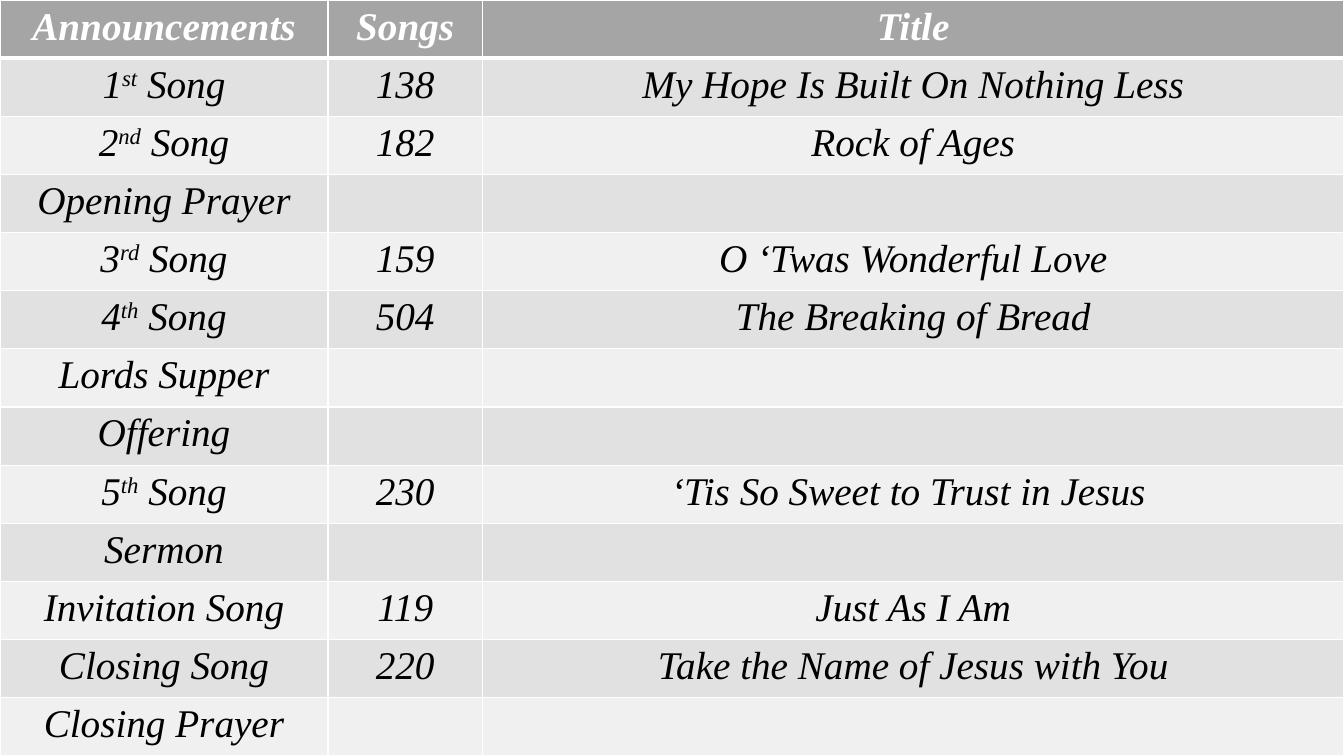
from lxml import etree
from pptx import Presentation
from pptx.dml.color import RGBColor
from pptx.enum.text import PP_ALIGN
from pptx.oxml.ns import qn
from pptx.util import Inches, Pt

HEAD = ("Announcements", "Songs", "Title")
# A tuple holds the number, its raised ending and the rest of the label.
ORDER = [
    (("1", "st", " Song"), "138", "My Hope Is Built On Nothing Less"),
    (("2", "nd", " Song"), "182", "Rock of Ages"),
    ("Opening Prayer", "", ""),
    (("3", "rd", " Song"), "159", "O ‘Twas Wonderful Love"),
    (("4", "th", " Song"), "504", "The Breaking of Bread"),
    ("Lords Supper", "", ""),
    ("Offering", "", ""),
    (("5", "th", " Song"), "230", "‘Tis So Sweet to Trust in Jesus "),
    ("Sermon", "", ""),
    ("Invitation Song", "119", "Just As I Am"),
    ("Closing Song", "220", "Take the Name of Jesus with You"),
    ("Closing Prayer", "", ""),
]
ROWS = [HEAD, *ORDER]

WIDE, HIGH = Inches(13.33), Inches(7.5)
SHARES = (0.244, 0.115, 0.641)
FONT = "Times New Roman"
WHITE = RGBColor(0xFF, 0xFF, 0xFF)
BLACK = RGBColor(0, 0, 0)
GREY = RGBColor(0xA5, 0xA5, 0xA5)
BANDS = (RGBColor(0xF0, 0xF0, 0xF0), RGBColor(0xE1, 0xE1, 0xE1))
CENTER = PP_ALIGN.CENTER


def write(cell, text, size=28, color=BLACK, bold=False):
    """Fill a cell with centred italics; the middle part of a tuple is raised."""
    parts = (text,) if isinstance(text, str) else text
    para = cell.text_frame.paragraphs[0]
    para.alignment = CENTER
    para.font.size = Pt(size)
    for spot, part in enumerate(parts):
        if not part:
            continue
        run = para.add_run()
        run.text = part
        font = run.font
        font.name, font.size = FONT, Pt(size)
        font.bold, font.italic = bold, True
        font.color.rgb = color
        if spot == 1:
            run._r.get_or_add_rPr().set("baseline", "30000")


def edge(cell, top=1, base=1):
    """Draw white borders, with widths in points for the top and base."""
    props = cell._tc.get_or_add_tcPr()
    sides = (("a:lnL", 1), ("a:lnR", 1), ("a:lnT", top), ("a:lnB", base))
    for spot, (tag, width) in enumerate(sides):
        line = etree.Element(qn(tag), w=str(Pt(width)))
        fill = etree.SubElement(line, qn("a:solidFill"))
        etree.SubElement(fill, qn("a:srgbClr"), val=str(WHITE))
        props.insert(spot, line)


def main():
    deck = Presentation()
    deck.slide_width, deck.slide_height = WIDE, HIGH
    slide = deck.slides.add_slide(deck.slide_layouts[6])
    frame = slide.shapes.add_table(len(ROWS), len(HEAD), 0, 0, WIDE, HIGH)
    table = frame.table
    for col, share in zip(table.columns, SHARES):
        col.width = int(WIDE * share)
    for r, texts in enumerate(ROWS):
        table.rows[r].height = HIGH // len(ROWS)
        head = r == 0
        for c, text in enumerate(texts):
            cell = table.cell(r, c)
            cell.fill.solid()
            cell.fill.fore_color.rgb = GREY if head else BANDS[r % 2]
            write(cell, text, color=WHITE if head else BLACK, bold=head)
            edge(cell, top=3 if r == 1 else 1, base=3 if head else 1)
    deck.save("out.pptx")


if __name__ == "__main__":
    main()
